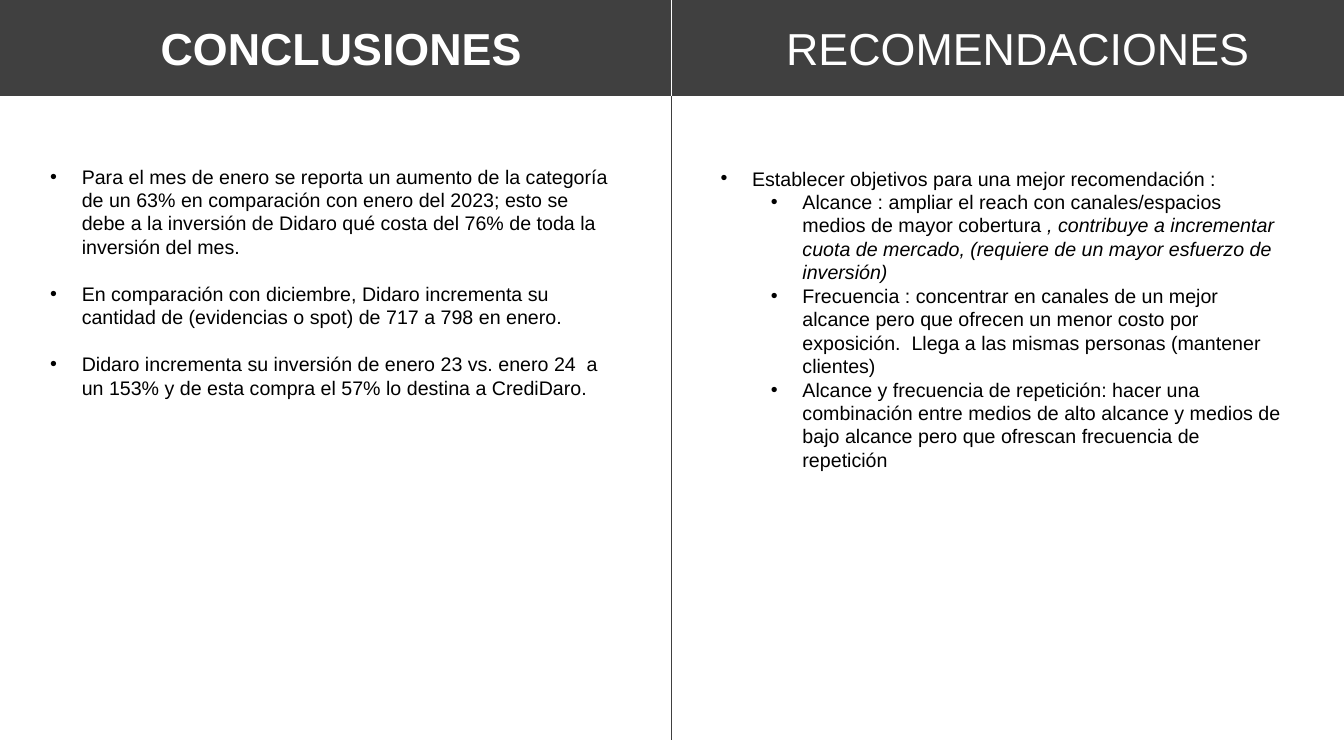
import pptx
import pptx.util
import pptx.dml.color
import pptx.enum.shapes
import pptx.enum.text
import pptx.oxml.ns
import lxml.etree
from dataclasses import dataclass

Pt = pptx.util.Pt
Anchor = pptx.enum.text.MSO_ANCHOR


@dataclass
class Theme:
    font: str = "Arial"
    dark: str = "404040"
    white: str = "FFFFFF"
    black: str = "000000"
    head: float = 32
    body: float = 14
    pitch: float = 16.75
    hair: float = 0.5


class Deck:
    def __init__(self, theme, wide, high):
        self.theme = theme
        self.file = pptx.Presentation()
        self.file.slide_width, self.file.slide_height = Pt(wide), Pt(high)
        self.slide = self.file.slides.add_slide(self.file.slide_layouts[5])
        self.shapes = self.slide.shapes

    def color(self, code):
        return pptx.dml.color.RGBColor.from_string(code)

    def style(self, run, size, code, bold=False, italic=False):
        font = run.font
        font.name, font.size = self.theme.font, Pt(size)
        font.bold, font.italic = bold, italic
        font.color.rgb = self.color(code)

    def band(self, x, y, w, h):
        rect = pptx.enum.shapes.MSO_SHAPE.RECTANGLE
        band = self.shapes.add_shape(rect, Pt(x), Pt(y), Pt(w), Pt(h))
        band.shadow.inherit = False
        band.fill.solid()
        band.fill.fore_color.rgb = self.color(self.theme.dark)
        band.line.color.rgb = self.color(self.theme.dark)
        band.line.width = Pt(1)
        # The band lies behind the title
        self.shapes.title.element.addprevious(band.element)

    def rule(self, x, top, end, code):
        kind = pptx.enum.shapes.MSO_CONNECTOR.STRAIGHT
        line = self.shapes.add_connector(kind, Pt(x), Pt(top), Pt(x), Pt(end))
        line.line.color.rgb = self.color(code)
        line.line.width = Pt(self.theme.hair)
        tag = pptx.oxml.ns.qn("a:effectLst")
        lxml.etree.SubElement(line.element.spPr, tag)

    def head(self, box, text, x, y, w, h, bold):
        box.left, box.top, box.width, box.height = Pt(x), Pt(y), Pt(w), Pt(h)
        frame = box.text_frame
        frame.text = text
        frame.word_wrap = True
        frame.vertical_anchor = Anchor.MIDDLE
        para = frame.paragraphs[0]
        para.alignment = pptx.enum.text.PP_ALIGN.LEFT
        self.style(para.runs[0], self.theme.head, self.theme.white, bold)

    def title(self, text, *place):
        self.head(self.shapes.title, text, *place, bold=True)

    def label(self, text, *place):
        box = self.shapes.add_textbox(0, 0, 0, 0)
        self.head(box, text, *place, bold=False)

    def bullets(self, items, x, y, w, h, gap=0):
        """Each item is a level, a plain part and an italic part."""
        frame = self.shapes.add_textbox(Pt(x), Pt(y), Pt(w), Pt(h)).text_frame
        frame.word_wrap = True
        for index, (level, plain, slant) in enumerate(items):
            para = frame.add_paragraph() if index else frame.paragraphs[0]
            para.level = level
            para.line_spacing = Pt(self.theme.pitch)
            para.space_before = Pt(gap if index else 0)
            for text, italic in ((plain, False), (slant, True)):
                if text:
                    run = para.add_run()
                    run.text = text
                    self.style(run, self.theme.body, self.theme.black, italic=italic)
            self.mark(para, 22.5 + 36 * level)

    def mark(self, para, left):
        props = para._p.get_or_add_pPr()
        props.set("marL", str(Pt(left)))
        props.set("indent", str(-Pt(22.5)))
        for name, key, value in (("a:buFont", "typeface", self.theme.font),
                                 ("a:buChar", "char", "•")):
            tag = pptx.oxml.ns.qn(name)
            lxml.etree.SubElement(props, tag).set(key, value)


FINDINGS = [
    (0, "Para el mes de enero se reporta un aumento de la categoría de un 63% en "
        "comparación con enero del 2023; esto se debe a la inversión de Didaro qué "
        "costa del 76% de toda la inversión del mes.", ""),
    (0, "En comparación con diciembre, Didaro incrementa su cantidad de "
        "(evidencias o spot) de 717 a 798 en enero.", ""),
    (0, "Didaro incrementa su inversión de enero 23 vs. enero 24  a un 153% y de "
        "esta compra el 57% lo destina a CrediDaro.", ""),
]
ADVICE = [
    (0, "Establecer objetivos para una mejor recomendación :", ""),
    (1, "Alcance : ampliar el reach con canales/espacios medios de mayor cobertura ",
        ", contribuye a incrementar cuota de mercado, (requiere de un mayor "
        "esfuerzo de inversión)"),
    (1, "Frecuencia : concentrar en canales de un mejor alcance pero que ofrecen un "
        "menor costo por exposición.  Llega a las mismas personas (mantener "
        "clientes)", ""),
    (1, "Alcance y frecuencia de repetición: hacer una combinación entre medios de "
        "alto alcance y medios de bajo alcance pero que ofrescan frecuencia de "
        "repetición", ""),
]


def main():
    theme = Theme()
    deck = Deck(theme, 960, 540)
    middle, edge = 479.5, 68.4

    # Header band and headings
    deck.band(0, 0, 960, edge)
    deck.title("CONCLUSIONES", 107.5, 11, 340, 46)
    deck.label("RECOMENDACIONES", 554.4, 11, 370, 46)

    # Divider between the two halves
    deck.rule(middle, edge, 528.5, theme.dark)
    deck.rule(middle, 0, edge, theme.white)

    # Bulleted columns
    deck.bullets(FINDINGS, 28.8, 114, 417, 304, gap=theme.pitch)
    deck.bullets(ADVICE, 507.6, 115.4, 417, 230)

    deck.file.save("out.pptx")


if __name__ == "__main__":
    main()
